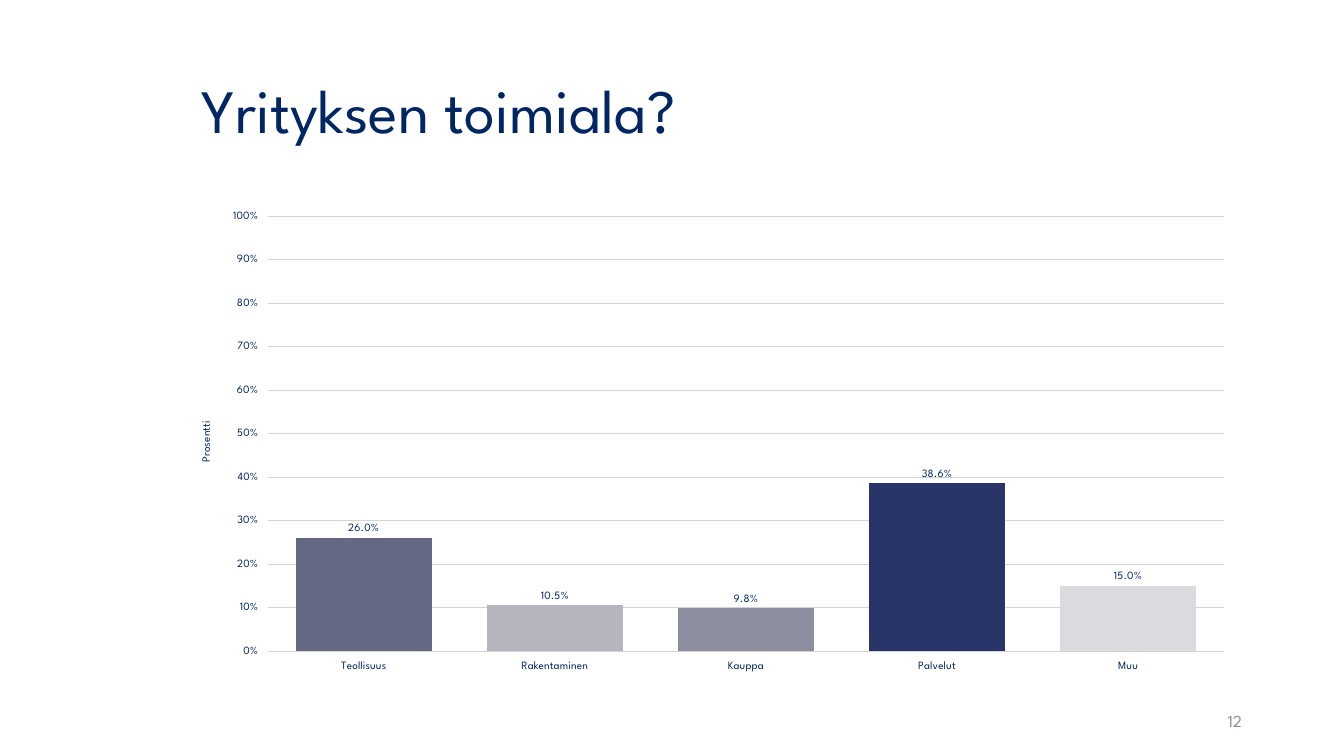
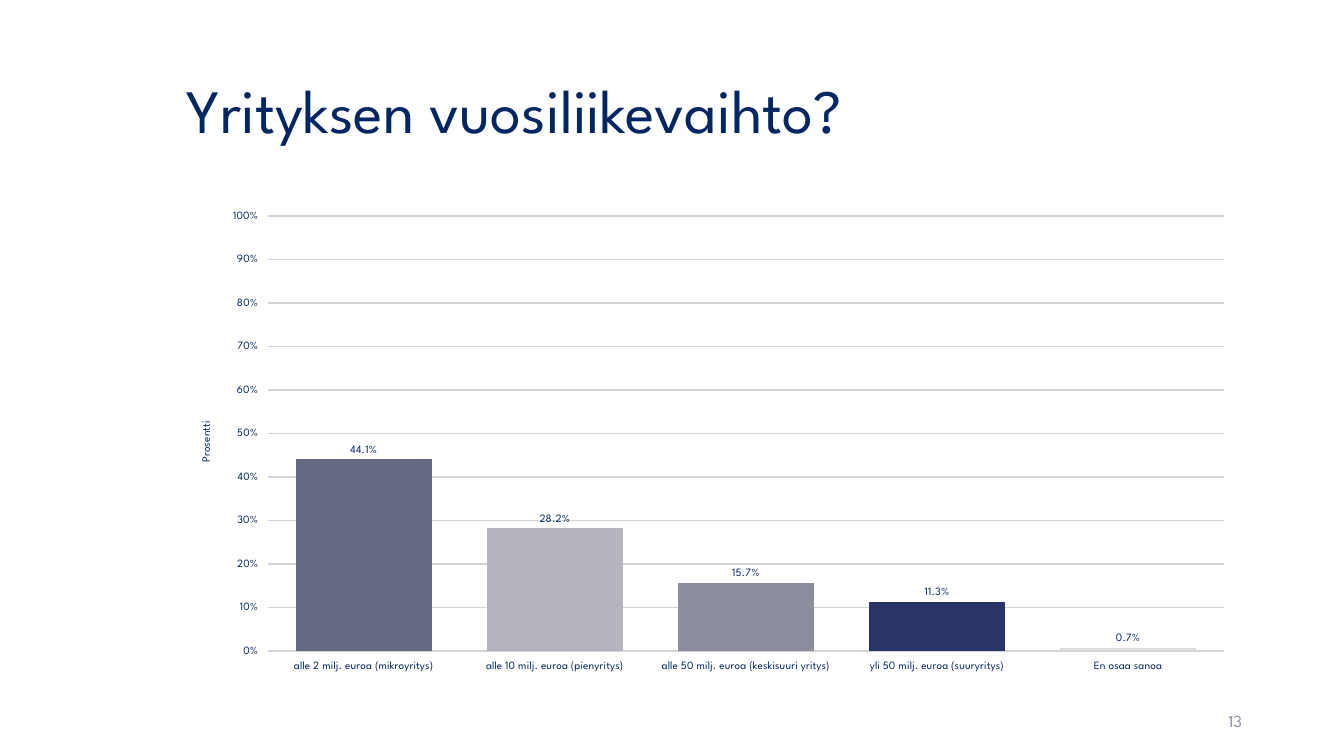
import pptx
import pptx.chart.data
import pptx.dml.color
import pptx.enum.chart
import pptx.enum.text
import pptx.oxml
import pptx.oxml.ns
import pptx.util
from pptx.util import Cm, Pt

COLOURS = {"navy": "002663", "grey": "8C8E9F", "grid": "D3D3D3"}
BAR_COLOURS = ["646883", "B4B5BF", "8C8E9F", "293568", "DADBDF"]
FONT = "League Spartan"


def rgb(value):
    return pptx.dml.color.RGBColor.from_string(value)


def place(parent, index, **fractions):
    """Fix a chart part at fractions of the chart's size."""
    for old in parent.findall(pptx.oxml.ns.qn("c:layout")):
        parent.remove(old)
    target = '<c:layoutTarget val="inner"/>' if "w" in fractions else ""
    modes = "".join(f'<c:{key}Mode val="edge"/>' for key in "xy")
    values = "".join(f'<c:{key} val="{value}"/>' for key, value in fractions.items())
    parent.insert(index, pptx.oxml.parse_xml(
        f"<c:layout {pptx.oxml.ns.nsdecls('c')}><c:manualLayout>"
        f"{target}{modes}{values}</c:manualLayout></c:layout>"))


class SurveyDeck:
    """Holds the shared style and the current slide."""

    def __init__(self):
        self.deck = pptx.Presentation()
        self.deck.slide_width, self.deck.slide_height = Cm(33.87), Cm(19.05)
        self.page = None

    def add_page(self):
        self.page = self.deck.slides.add_slide(self.deck.slide_layouts[6])

    def style(self, font, size, colour="navy"):
        font.name, font.size = FONT, Pt(size)
        font.bold = False
        font.color.rgb = rgb(COLOURS[colour])

    def text(self, words, left, top, width, height, size, colour="navy"):
        box = self.page.shapes.add_textbox(Cm(left), Cm(top), Cm(width), Cm(height))
        frame = box.text_frame
        frame.word_wrap = True
        frame.vertical_anchor = pptx.enum.text.MSO_ANCHOR.MIDDLE
        para = frame.paragraphs[0]
        para.text = words
        self.style(para.font, size, colour)
        return frame

    def title(self, words, indent):
        frame = self.text(words, 4.45, 1.02, 26.9, 3.68, 44)
        frame.margin_left = Cm(0.25 + indent)
        frame.paragraphs[0].line_spacing = 0.9

    def page_number(self, number):
        frame = self.text(str(number), 23.93, 17.65, 7.62, 1.02, 12, "grey")
        frame.paragraphs[0].alignment = pptx.enum.text.PP_ALIGN.RIGHT

    def column_chart(self, answers, grid_width):
        data = pptx.chart.data.CategoryChartData()
        data.categories = list(answers)
        data.add_series("Series 1", list(answers.values()))
        chart = self.page.shapes.add_chart(
            pptx.enum.chart.XL_CHART_TYPE.COLUMN_CLUSTERED,
            Cm(4.45), Cm(5.08), Cm(26.9), Cm(12.09), data).chart
        chart.has_title = chart.has_legend = False
        self.style(chart.font, 18)

        # Axes and grid
        for axis in (chart.category_axis, chart.value_axis):
            self.style(axis.tick_labels.font, 8)
            axis.format.line.fill.background()
        scale = chart.value_axis
        scale.minimum_scale, scale.maximum_scale, scale.major_unit = 0, 1, 0.1
        scale.tick_labels.number_format = "0%"
        scale.tick_labels.number_format_is_linked = False
        scale.has_major_gridlines = True
        grid = scale.major_gridlines.format.line
        grid.color.rgb, grid.width = rgb(COLOURS["grid"]), Pt(grid_width)
        para = scale.axis_title.text_frame.paragraphs[0]
        para.text = "Prosentti"
        self.style(para.font, 8)

        # Positions inside the chart
        place(scale.axis_title.element, 1, x=0.02, y=0.453)
        plot_area = chart.element.find(".//" + pptx.oxml.ns.qn("c:plotArea"))
        place(plot_area, 0, x=0.086, y=0.03, w=0.895, h=0.907)

        # Bars and their values
        plot = chart.plots[0]
        plot.vary_by_categories = False
        plot.gap_width, plot.overlap = 40, -2
        for index, colour in enumerate(BAR_COLOURS):
            fill = plot.series[0].points[index].format.fill
            fill.solid()
            fill.fore_color.rgb = rgb(colour)
        plot.has_data_labels = True
        labels = plot.data_labels
        labels.show_value = True
        labels.number_format, labels.number_format_is_linked = "0.0%", False
        labels.position = pptx.enum.chart.XL_LABEL_POSITION.OUTSIDE_END
        self.style(labels.font, 8)


# Title, title indent, grid line width, answers
QUESTIONS = [
    ("Yrityksen toimiala?", 0.38, 0.5, {
        "Teollisuus": 0.26,
        "Rakentaminen": 0.105,
        "Kauppa": 0.098,
        "Palvelut": 0.386,
        "Muu": 0.15,
    }),
    ("Yrityksen vuosiliikevaihto?", 0, 1, {
        "alle 2 milj. euroa (mikroyritys)": 0.441,
        "alle 10 milj. euroa (pienyritys)": 0.282,
        "alle 50 milj. euroa (keskisuuri yritys)": 0.157,
        "yli 50 milj. euroa (suuryritys)": 0.113,
        "En osaa sanoa": 0.007,
    }),
]


def main():
    survey = SurveyDeck()
    for number, (question, indent, grid_width, answers) in enumerate(QUESTIONS, 12):
        survey.add_page()
        survey.title(question, indent)
        survey.page_number(number)
        survey.column_chart(answers, grid_width)
    survey.deck.save("out.pptx")


if __name__ == "__main__":
    main()
